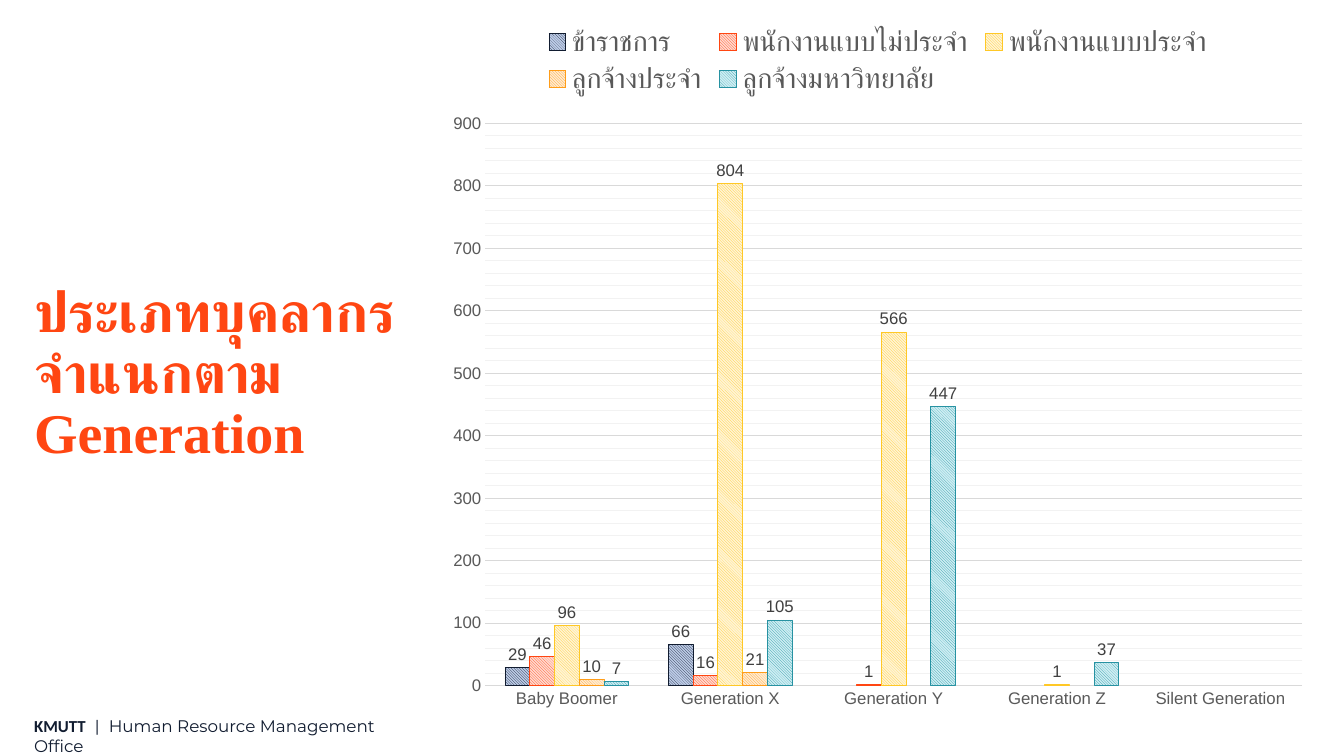
from copy import deepcopy
from dataclasses import dataclass
from typing import Optional

from lxml import etree
from pptx import Presentation
from pptx.chart.axis import ValueAxis
from pptx.chart.chart import Chart
from pptx.chart.data import CategoryChartData
from pptx.dml.color import RGBColor
from pptx.enum.chart import XL_CHART_TYPE, XL_LABEL_POSITION, XL_LEGEND_POSITION, XL_TICK_MARK
from pptx.enum.dml import MSO_PATTERN
from pptx.enum.text import MSO_ANCHOR
from pptx.oxml.ns import qn
from pptx.slide import Slide
from pptx.text.text import Font
from pptx.util import Inches, Pt

COLUMNS = XL_CHART_TYPE.COLUMN_CLUSTERED
OUTSIDE_END = XL_LABEL_POSITION.OUTSIDE_END
LEGEND_TOP = XL_LEGEND_POSITION.TOP
NO_TICK = XL_TICK_MARK.NONE
HATCH = MSO_PATTERN.LIGHT_DOWNWARD_DIAGONAL
ANCHOR_TOP = MSO_ANCHOR.TOP
ANCHOR_BOTTOM = MSO_ANCHOR.BOTTOM
THAI_FONT = "Times New Roman"

COLORS = {
    "navy": "111C30", "navy_pale": "BDCCE8",
    "red": "FF4612", "red_pale": "FFDAD0",
    "yellow": "FFC826", "yellow_pale": "FFF4D4",
    "orange": "FF9D19", "orange_pale": "FFEBD1",
    "teal": "2792A2", "teal_pale": "CDEEF3",
    "axis_text": "595959", "label_text": "404040", "black": "000000",
    "grid": "D9D9D9", "minor_grid": "F2F2F2",
}


@dataclass
class TextRun:
    text: str
    font_name: str
    bold: bool = False


@dataclass
class TextBlock:
    left: float
    top: float
    width: float
    height: float
    runs: list[TextRun]
    size: int
    color: str
    anchor: MSO_ANCHOR
    line_spacing: float = 1.0


@dataclass
class StaffType:
    name: str
    counts: tuple[Optional[int], ...]
    color: str


GENERATIONS = ["Baby Boomer", "Generation X", "Generation Y", "Generation Z", "Silent Generation"]
STAFF_TYPES = [
    StaffType("ข้าราชการ", (29, 66, None, None, None), "navy"),
    StaffType("พนักงานแบบไม่ประจำ", (46, 16, 1, None, None), "red"),
    StaffType("พนักงานแบบประจำ", (96, 804, 566, 1, None), "yellow"),
    StaffType("ลูกจ้างประจำ", (10, 21, None, None, None), "orange"),
    StaffType("ลูกจ้างมหาวิทยาลัย", (7, 105, 447, 37, None), "teal"),
]
TITLE = TextBlock(
    0.24, 2.89, 4.08, 1.78,
    [TextRun("ประเภทบุคลากรจำแนกตาม ", "Calibri", True), TextRun("Generation", "Times New Roman", True)],
    40, "red", ANCHOR_BOTTOM, 0.9,
)
FOOTER = TextBlock(
    0.24, 7.05, 3.62, 0.3,
    [
        TextRun("KMUTT", "Calibri", True),
        TextRun("  |  ", "Calibri"),
        TextRun("Human Resource Management Office", "Montserrat"),
    ],
    12, "navy", ANCHOR_TOP,
)


def rgb(name: str) -> RGBColor:
    return RGBColor.from_string(COLORS[name])


def set_thai_font(properties: etree._Element) -> None:
    """Add the complex-script typeface right after the Latin one."""
    thai = etree.Element(qn("a:cs"), typeface=THAI_FONT)
    properties.find(qn("a:latin")).addnext(thai)


def style_font(font: Font, size: int, color: str, name: str = "Arial") -> None:
    font.size = Pt(size)
    font.name = name
    font.color.rgb = rgb(color)


def add_text(slide: Slide, block: TextBlock) -> None:
    shape = slide.shapes.add_textbox(
        Inches(block.left), Inches(block.top), Inches(block.width), Inches(block.height)
    )
    frame = shape.text_frame
    frame.word_wrap = True
    frame.vertical_anchor = block.anchor
    paragraph = frame.paragraphs[0]
    paragraph.line_spacing = block.line_spacing
    for item in block.runs:
        run = paragraph.add_run()
        run.text = item.text
        style_font(run.font, block.size, block.color, item.font_name)
        run.font.bold = item.bold
        set_thai_font(run._r.get_or_add_rPr())


def style_gridlines(axis: ValueAxis) -> None:
    """Format the major gridlines, then give the minor ones the same line in a paler grey."""
    axis.has_major_gridlines = axis.has_minor_gridlines = True
    line = axis.major_gridlines.format.line
    line.color.rgb = rgb("grid")
    line.width = Pt(0.75)
    major = axis._element.find(qn("c:majorGridlines"))
    minor = axis._element.find(qn("c:minorGridlines"))
    minor_format = deepcopy(major.find(qn("c:spPr")))
    next(minor_format.iter(qn("a:srgbClr"))).set("val", COLORS["minor_grid"])
    minor.append(minor_format)


def style_axes(chart: Chart) -> None:
    for axis in (chart.category_axis, chart.value_axis):
        axis.major_tick_mark = NO_TICK
        axis.minor_tick_mark = NO_TICK
        axis.format.line.fill.background()
        style_font(axis.tick_labels.font, 12, "axis_text")
    values = chart.value_axis
    values.minimum_scale, values.maximum_scale = 0, 900
    values.major_unit, values.minor_unit = 100, 20
    style_gridlines(values)


def style_series(chart: Chart) -> None:
    plot = chart.plots[0]
    plot.gap_width = 160
    plot.overlap = 0
    plot.vary_by_categories = False
    for series, staff in zip(plot.series, STAFF_TYPES):
        series.invert_if_negative = False
        fill = series.format.fill
        fill.patterned()
        fill.pattern = HATCH
        fill.fore_color.rgb = rgb(staff.color)
        fill.back_color.rgb = rgb(f"{staff.color}_pale")
        series.format.line.color.rgb = rgb(staff.color)
        series.format.line.width = Pt(0.75)
        labels = series.data_labels
        labels.show_value = True
        labels.position = OUTSIDE_END
        style_font(labels.font, 12, "label_text")


def add_staff_chart(slide: Slide) -> None:
    data = CategoryChartData()
    data.categories = GENERATIONS
    for staff in STAFF_TYPES:
        data.add_series(staff.name, staff.counts)
    chart = slide.shapes.add_chart(
        COLUMNS, Inches(4.32), Inches(0.13), Inches(8.77), Inches(7.03), data
    ).chart
    chart.has_title = False
    style_font(chart.font, 10, "black")
    style_axes(chart)
    style_series(chart)
    chart.has_legend = True
    chart.legend.position = LEGEND_TOP
    chart.legend.include_in_layout = False
    style_font(chart.legend.font, 20, "axis_text")
    set_thai_font(chart.legend.font._element)


def main() -> None:
    presentation = Presentation()
    presentation.slide_width = Inches(13.33)
    presentation.slide_height = Inches(7.5)
    slide = presentation.slides.add_slide(presentation.slide_layouts[6])
    add_text(slide, FOOTER)
    add_text(slide, TITLE)
    add_staff_chart(slide)
    presentation.save("out.pptx")


if __name__ == "__main__":
    main()
